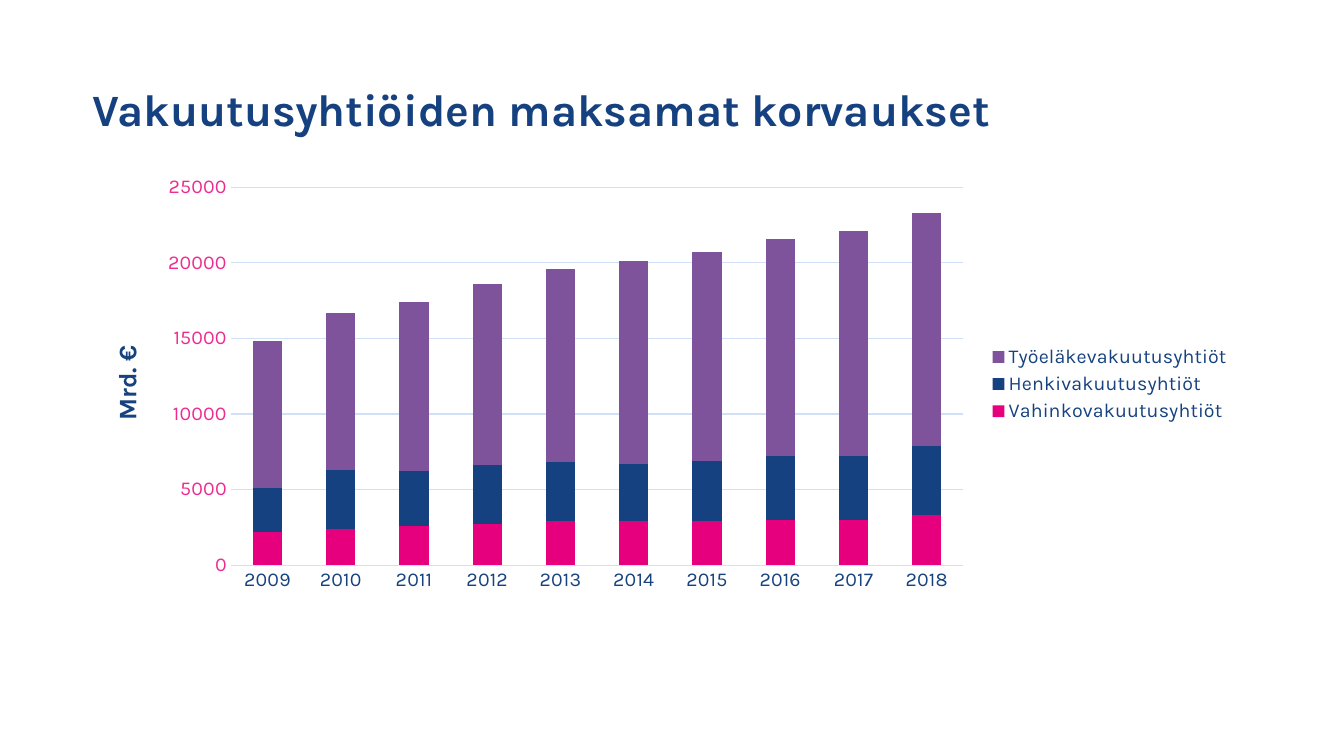
from lxml.etree import SubElement
from pptx import Presentation
from pptx.chart.data import CategoryChartData
from pptx.dml.color import RGBColor
from pptx.enum.chart import XL_CHART_TYPE, XL_LEGEND_POSITION, XL_TICK_MARK
from pptx.enum.text import MSO_ANCHOR
from pptx.oxml.ns import qn
from pptx.util import Cm, Pt

FONT = "Karla"
NAVY = RGBColor(0x16, 0x41, 0x80)
LABEL_NAVY = RGBColor(0x16, 0x42, 0x80)
MAGENTA = RGBColor(0xE6, 0x00, 0x7E)
PINK = RGBColor(0xEE, 0x2C, 0x90)
PURPLE = RGBColor(0x7F, 0x53, 0x9C)
PALE_BLUE = RGBColor(0xD1, 0xE0, 0xF7)

YEARS = [str(year) for year in range(2009, 2019)]
CLAIMS = [
    ("Vahinkovakuutusyhtiöt", MAGENTA,
     [2200, 2400, 2600, 2700, 2900, 2900, 2900, 3000, 3000, 3300]),
    ("Henkivakuutusyhtiöt", NAVY,
     [2900, 3900, 3600, 3900, 3900, 3800, 4000, 4200, 4200, 4600]),
    ("Työeläkevakuutusyhtiöt", PURPLE,
     [9700, 10400, 11200, 12000, 12800, 13400, 13800, 14400, 14900, 15400]),
]


def style_font(font, size, color, bold=False):
    font.name = FONT
    font.size = Pt(size)
    font.bold = bold
    font.color.rgb = color


def place_in_chart(parent, index, **settings):
    """Give a chart part a manual layout, in fractions of the chart."""
    for old_layout in parent.findall(qn("c:layout")):
        parent.remove(old_layout)
    layout = SubElement(parent, qn("c:layout"))
    parent.insert(index, layout)
    manual = SubElement(layout, qn("c:manualLayout"))
    for tag, value in settings.items():
        SubElement(manual, qn(f"c:{tag}")).set("val", str(value))


def add_heading(slide, left, top, width, height):
    heading = slide.shapes.add_textbox(left, top, width, height).text_frame
    heading.word_wrap = True
    heading.vertical_anchor = MSO_ANCHOR.MIDDLE
    line = heading.paragraphs[0]
    line.text = "Vakuutusyhtiöiden maksamat korvaukset"
    line.line_spacing = 0.9
    style_font(line.runs[0].font, 32, NAVY, bold=True)


def style_year_axis(axis):
    axis.major_tick_mark = XL_TICK_MARK.NONE
    style_font(axis.tick_labels.font, 14, LABEL_NAVY)
    axis.format.line.color.rgb = PALE_BLUE
    axis.format.line.width = Pt(0.75)


def style_amount_axis(axis):
    axis.minimum_scale, axis.maximum_scale, axis.major_unit = 0, 25000, 5000
    axis.major_tick_mark = XL_TICK_MARK.NONE
    style_font(axis.tick_labels.font, 14, PINK)
    axis.format.line.fill.background()
    gridline = axis.major_gridlines.format.line
    gridline.color.rgb = PALE_BLUE
    gridline.width = Pt(0.75)

    unit = axis.axis_title.text_frame
    unit.text = "Mrd. €"
    style_font(unit.paragraphs[0].runs[0].font, 18, LABEL_NAVY, bold=True)
    body = axis.axis_title._element.find(".//" + qn("a:bodyPr"))
    body.set("rot", "-5400000")
    body.set("vert", "horz")
    place_in_chart(axis.axis_title._element, 1,
                   xMode="edge", yMode="edge", x=0.02, y=0.4)


def add_claims_chart(slide, left, top, width, height):
    data = CategoryChartData(number_format="General")
    data.categories = YEARS
    for company_type, _, amounts in CLAIMS:
        data.add_series(company_type, amounts)
    chart = slide.shapes.add_chart(
        XL_CHART_TYPE.COLUMN_STACKED, left, top, width, height, data).chart
    style_font(chart.font, 14, LABEL_NAVY)
    chart.has_title = False

    columns = chart.plots[0]
    columns.gap_width = 150
    columns.overlap = 100
    columns.vary_by_categories = False
    for series, (_, color, _) in zip(columns.series, CLAIMS):
        series.format.fill.solid()
        series.format.fill.fore_color.rgb = color

    style_year_axis(chart.category_axis)
    style_amount_axis(chart.value_axis)
    plot_area = chart._chartSpace.find(".//" + qn("c:plotArea"))
    place_in_chart(plot_area, 0, layoutTarget="inner", xMode="edge",
                   yMode="edge", x=0.128, y=0.046, w=0.632, h=0.872)

    chart.has_legend = True
    chart.legend.position = XL_LEGEND_POSITION.RIGHT
    chart.legend.include_in_layout = False
    style_font(chart.legend.font, 14, LABEL_NAVY)


def main():
    deck = Presentation()
    deck.slide_width, deck.slide_height = Cm(33.87), Cm(19.05)
    slide = deck.slides.add_slide(deck.slide_layouts[6])
    margin = Cm(2.08)
    content_width = Cm(29.21)
    add_heading(slide, margin, Cm(0.99), content_width, Cm(3.68))
    add_claims_chart(slide, margin, Cm(4.22), content_width, Cm(10.92))
    deck.save("out.pptx")


if __name__ == "__main__":
    main()
